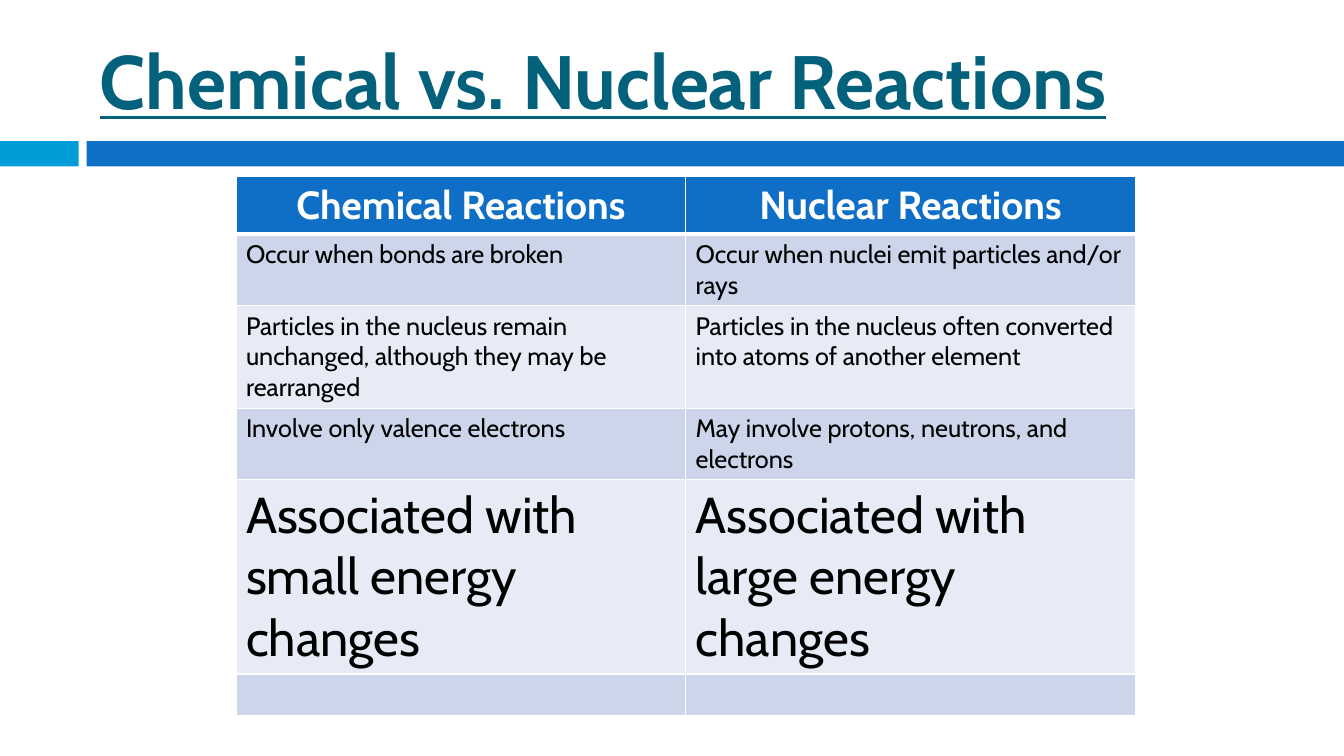
from lxml.etree import SubElement
from pptx import Presentation
from pptx.dml.color import RGBColor
from pptx.enum.shapes import MSO_SHAPE
from pptx.enum.text import MSO_ANCHOR, MSO_AUTO_SIZE, PP_ALIGN
from pptx.oxml.ns import qn
from pptx.util import Emu, Pt

WHITE, BLUE, CYAN, TEAL, BLACK = "FFFFFF", "0F6FC6", "009DD9", "04617B", "000000"
BANDS = ("CCD5EA", "E7EBF5")
ROWS = [
    ("Chemical Reactions", "Nuclear Reactions", 28),
    ("Occur when bonds are broken",
     "Occur when nuclei emit particles and/or rays", 18),
    ("Particles in the nucleus remain unchanged, although they may be rearranged",
     "Particles in the nucleus often converted into atoms of another element", 18),
    ("Involve only valence electrons",
     "May involve protons, neutrons, and electrons", 18),
    ("Associated with small energy changes",
     "Associated with large energy changes", 36),
    ("", "", 18),
]


def px(n):
    return Emu(n * 9144)


def rgb(color):
    return RGBColor.from_string(color)


class Deck:
    """Holds the font and the current slide, and adds styled elements to it."""

    def __init__(self, prs, font):
        self.font = font
        self.s = prs.slides.add_slide(prs.slide_layouts[5])

    def run(self, p, text, size, color, bold=False, underline=False):
        r = p.add_run()
        r.text = text
        f = r.font
        f.name, f.size, f.bold, f.underline = self.font, Pt(size), bold, underline
        f.color.rgb = rgb(color)

    def title(self, text, x, y, w, h):
        sp = self.s.shapes.title
        sp.left, sp.top, sp.width, sp.height = map(px, (x, y, w, h))
        tf = sp.text_frame
        tf.auto_size = MSO_AUTO_SIZE.NONE
        tf.vertical_anchor = MSO_ANCHOR.MIDDLE
        p = tf.paragraphs[0]
        p.alignment = PP_ALIGN.LEFT
        self.run(p, text, 54, TEAL, bold=True, underline=True)

    def bar(self, color, x, y, w, h):
        sp = self.s.shapes.add_shape(MSO_SHAPE.RECTANGLE, *map(px, (x, y, w, h)))
        sp.shadow.inherit = False
        sp.fill.solid()
        sp.fill.fore_color.rgb = rgb(color)
        sp.line.fill.background()

    def borders(self, cell, top, bottom):
        tc_pr = cell._tc.get_or_add_tcPr()
        for side, width in (("L", 1), ("R", 1), ("T", top), ("B", bottom)):
            ln = SubElement(tc_pr, qn(f"a:ln{side}"), w=str(Pt(width)))
            fill = SubElement(ln, qn("a:solidFill"))
            SubElement(fill, qn("a:srgbClr"), val=WHITE)

    def table(self, rows, x, y, w, h, row_h):
        frame = self.s.shapes.add_table(len(rows), 2, *map(px, (x, y, w, h)))
        table = frame.table
        table.horz_banding = False
        for i, (*texts, size) in enumerate(rows):
            table.rows[i].height = px(row_h)
            head = i == 0
            for j, text in enumerate(texts):
                cell = table.cell(i, j)
                self.borders(cell, 3 if i == 1 else 1, 3 if head else 1)
                cell.fill.solid()
                cell.fill.fore_color.rgb = rgb(BLUE if head else BANDS[(i - 1) % 2])
                p = cell.text_frame.paragraphs[0]
                p.alignment = PP_ALIGN.CENTER if head else PP_ALIGN.LEFT
                if text:
                    self.run(p, text, size, WHITE if head else BLACK, bold=head)
        frame.height = px(h)


def main():
    prs = Presentation()
    prs.slide_width, prs.slide_height = px(1333), px(750)
    deck = Deck(prs, "Cabin")
    deck.bar(CYAN, 0, 140, 78, 25)
    deck.bar(BLUE, 86, 140, 1247, 25)
    deck.title("Chemical vs. Nuclear Reactions", 89, 25, 1189, 108)
    deck.table(ROWS, 234, 175, 892, 497, 41)
    prs.save("out.pptx")


if __name__ == "__main__":
    main()
